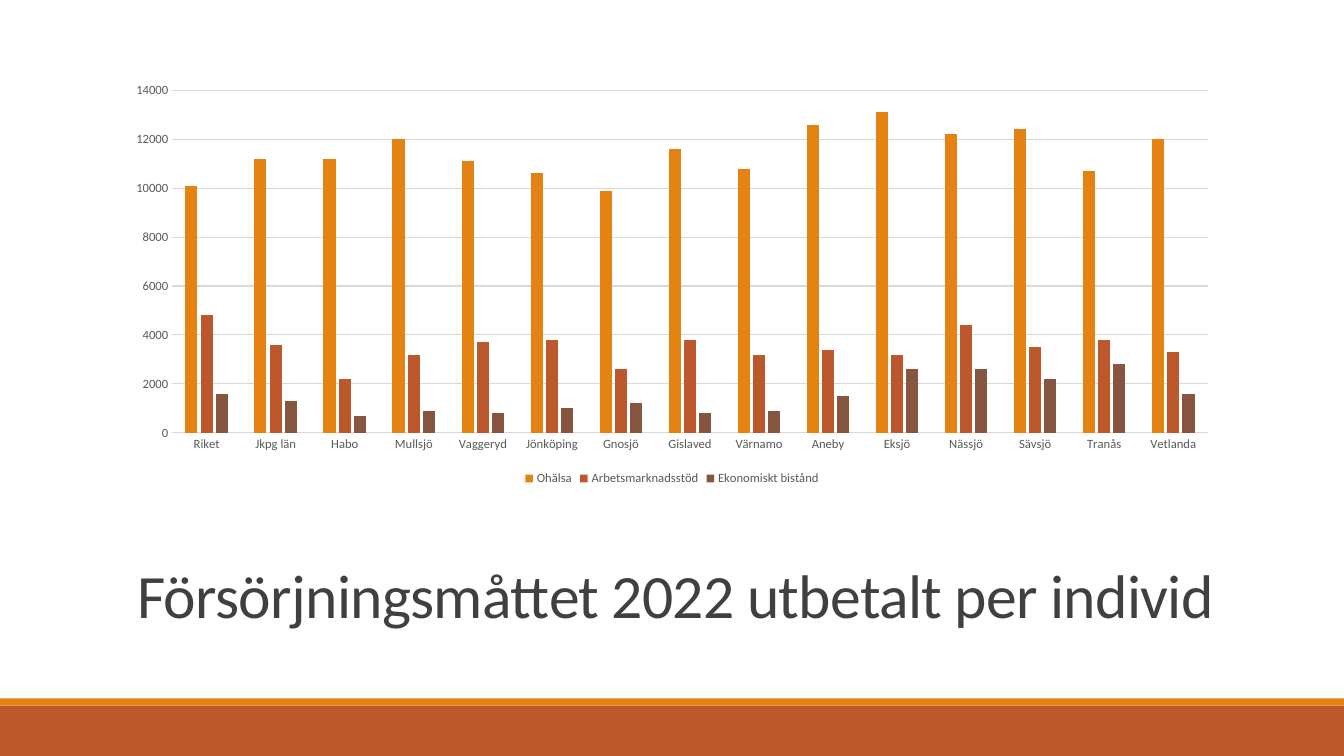
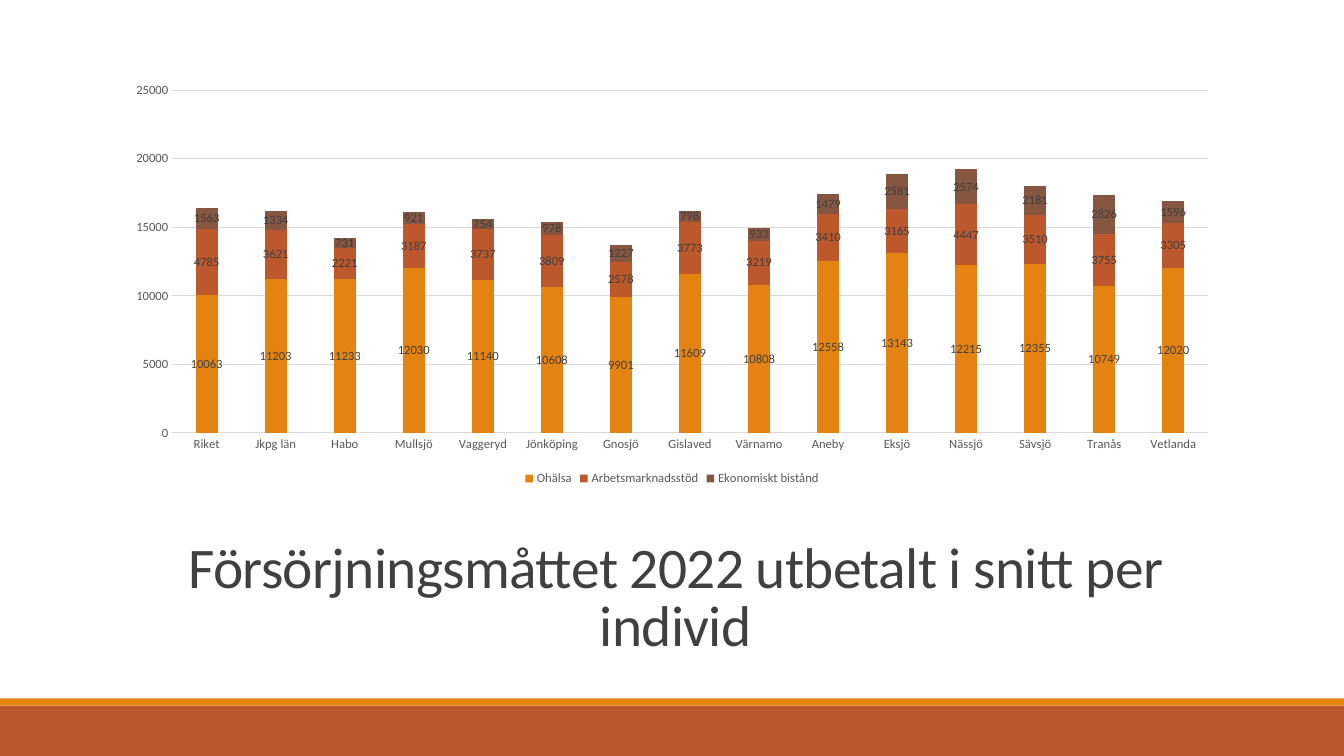
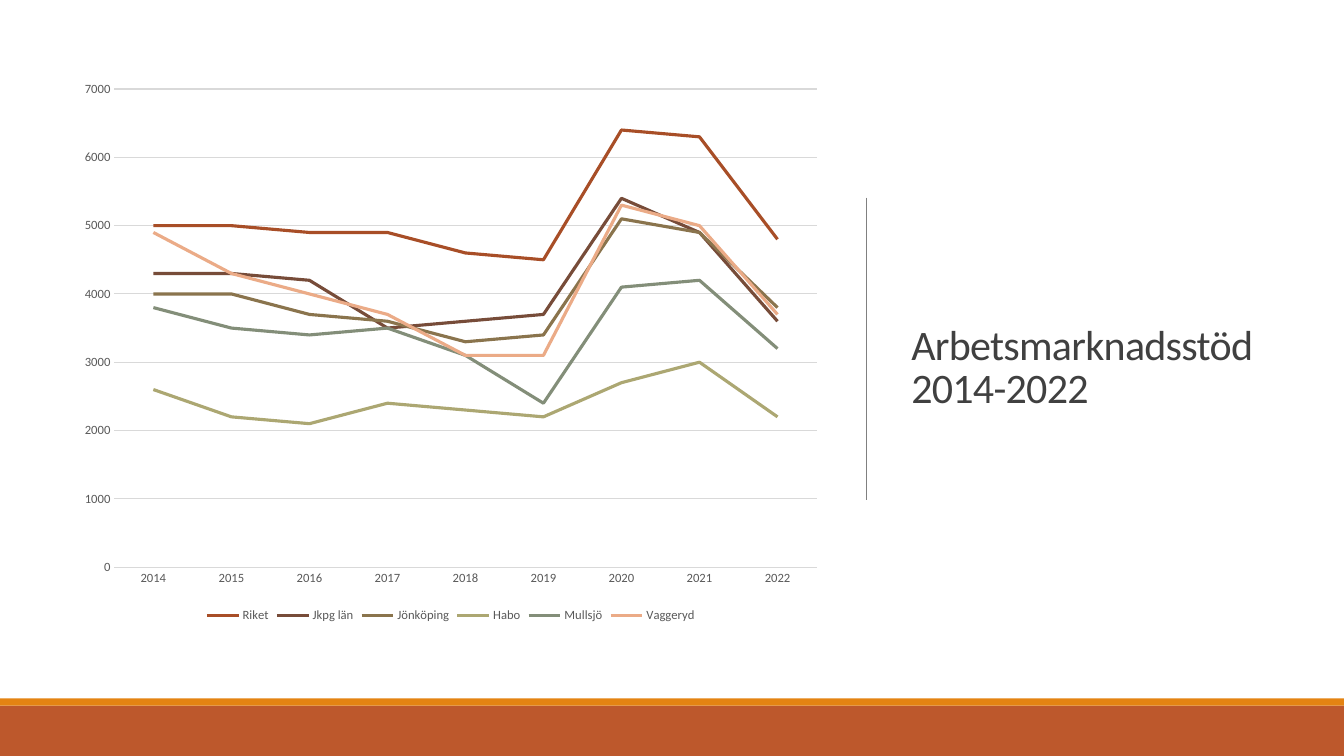
from lxml import etree
from pptx import Presentation
from pptx.chart.data import CategoryChartData
from pptx.dml.color import RGBColor
from pptx.enum.chart import XL_CHART_TYPE as CT, XL_LEGEND_POSITION as LP
from pptx.enum.chart import XL_MARKER_STYLE as MS, XL_TICK_MARK as TM
from pptx.enum.shapes import MSO_CONNECTOR, MSO_SHAPE
from pptx.enum.text import MSO_ANCHOR, PP_ALIGN
from pptx.oxml.ns import qn
from pptx.util import Inches, Pt

FONT = "Calibri"
COLORS = {
    "orange": "E48312", "rust": "BD582C", "brown": "865640",
    "title": "404040", "axis": "595959", "grid": "D9D9D9",
    "divider": "808080", "black": "000000",
    "riket": "A84E27", "lan": "774C39", "jonkoping": "8A744D",
    "habo": "ACA772", "mullsjo": "838E79", "vaggeryd": "EBAB87",
}

PLACES = ["Riket", "Jkpg län", "Habo", "Mullsjö", "Vaggeryd", "Jönköping",
          "Gnosjö", "Gislaved", "Värnamo", "Aneby", "Eksjö", "Nässjö",
          "Sävsjö", "Tranås", "Vetlanda"]
SUPPORT = [
    ("Ohälsa", "orange",
     [10063, 11203, 11233, 12030, 11140, 10608, 9901, 11609, 10808,
      12558, 13143, 12215, 12355, 10749, 12020]),
    ("Arbetsmarknadsstöd", "rust",
     [4785, 3621, 2221, 3187, 3737, 3809, 2578, 3773, 3219,
      3410, 3165, 4447, 3510, 3755, 3305]),
    ("Ekonomiskt bistånd", "brown",
     [1563, 1334, 731, 921, 754, 978, 1227, 798, 933,
      1479, 2581, 2574, 2181, 2826, 1596]),
]
SUPPORT_ROUNDED = [(name, color, [round(v, -2) for v in vals])
                   for name, color, vals in SUPPORT]

YEARS = [str(y) for y in range(2014, 2023)]
TREND = [
    ("Riket", "riket",
     [5000, 5000, 4900, 4900, 4600, 4500, 6400, 6300, 4800]),
    ("Jkpg län", "lan",
     [4300, 4300, 4200, 3500, 3600, 3700, 5400, 4900, 3600]),
    ("Jönköping", "jonkoping",
     [4000, 4000, 3700, 3600, 3300, 3400, 5100, 4900, 3800]),
    ("Habo", "habo",
     [2600, 2200, 2100, 2400, 2300, 2200, 2700, 3000, 2200]),
    ("Mullsjö", "mullsjo",
     [3800, 3500, 3400, 3500, 3100, 2400, 4100, 4200, 3200]),
    ("Vaggeryd", "vaggeryd",
     [4900, 4300, 4000, 3700, 3100, 3100, 5300, 5000, 3700]),
]

COLUMN_BOX = (1.13, 0.74, 11.07, 4.12)
TREND_BOX = (0.69, 0.7, 7.56, 5.52)
BOTTOM_TITLE = (1.2, 5.3, 11, 1.3)
SIDE_TITLE = (8.94, 0.9, 3.69, 5.53)


def rgb(name):
    return RGBColor.from_string(COLORS[name])


def inches(box):
    return [Inches(v) for v in box]


def set_font(font, size, color):
    font.name = FONT
    font.size = Pt(size)
    font.color.rgb = rgb(color)


def add_band(s, top, height, color):
    sp = s.shapes.add_shape(MSO_SHAPE.RECTANGLE,
                            *inches((0, top, 13.33, height)))
    sp.shadow.inherit = False
    sp.fill.solid()
    sp.fill.fore_color.rgb = rgb(color)
    sp.line.fill.background()


def add_slide(prs):
    s = prs.slides.add_slide(prs.slide_layouts[6])
    add_band(s, 7, 0.5, "rust")
    add_band(s, 6.93, 0.07, "orange")
    return s


def add_title(s, text, box, size, align=PP_ALIGN.CENTER):
    tf = s.shapes.add_textbox(*inches(box)).text_frame
    tf.word_wrap = True
    tf.vertical_anchor = MSO_ANCHOR.MIDDLE
    p = tf.paragraphs[0]
    p.text = text
    p.alignment = align
    p.line_spacing = 0.85
    set_font(p.font, size, "title")
    p._p.get_or_add_pPr().get_or_add_defRPr().set("spc", "-50")


def add_divider(s, x, top, bottom):
    line = s.shapes.add_connector(MSO_CONNECTOR.STRAIGHT,
                                  *inches((x, top, x, bottom)))
    line.line.color.rgb = rgb("divider")
    line.line.width = Pt(0.5)
    etree.SubElement(line._element.spPr, qn("a:effectLst"))


def style_axes(chart, maximum, step):
    cat, val = chart.category_axis, chart.value_axis
    for axis in (cat, val):
        axis.major_tick_mark = axis.minor_tick_mark = TM.NONE
        set_font(axis.tick_labels.font, 9, "axis")
    val.minimum_scale = 0
    val.maximum_scale = maximum
    val.major_unit = step
    val.has_major_gridlines = True
    val.format.line.fill.background()
    for line in (cat.format.line, val.major_gridlines.format.line):
        line.color.rgb = rgb("grid")
        line.width = Pt(0.75)


def add_chart(s, kind, box, cats, rows, maximum, step):
    data = CategoryChartData()
    data.categories = cats
    for name, _, vals in rows:
        data.add_series(name, vals)
    chart = s.shapes.add_chart(kind, *inches(box), data).chart
    set_font(chart.font, 10, "black")
    chart.has_title = False
    chart.has_legend = True
    chart.legend.position = LP.BOTTOM
    chart.legend.include_in_layout = False
    set_font(chart.legend.font, 9, "axis")
    style_axes(chart, maximum, step)
    chart.plots[0].vary_by_categories = False
    return chart


def add_columns(s, kind, rows, maximum, step, overlap, labels=False):
    plot = add_chart(s, kind, COLUMN_BOX, PLACES, rows, maximum, step).plots[0]
    plot.gap_width = 219
    plot.overlap = overlap
    for series, (_, color, _) in zip(plot.series, rows):
        series.format.fill.solid()
        series.format.fill.fore_color.rgb = rgb(color)
        if labels:
            series.data_labels.show_value = True
            set_font(series.data_labels.font, 9, "title")


def add_lines(s, rows, maximum, step):
    chart = add_chart(s, CT.LINE, TREND_BOX, YEARS, rows, maximum, step)
    for series, (_, color, _) in zip(chart.plots[0].series, rows):
        series.smooth = False
        series.marker.style = MS.NONE
        series.format.line.color.rgb = rgb(color)
        series.format.line.width = Pt(2.25)


def main():
    prs = Presentation()
    prs.slide_width, prs.slide_height = Inches(13.33), Inches(7.5)

    s = add_slide(prs)
    add_title(s, "Försörjningsmåttet 2022 utbetalt per individ",
              BOTTOM_TITLE, 44)
    add_columns(s, CT.COLUMN_CLUSTERED, SUPPORT_ROUNDED, 14000, 2000, -27)

    s = add_slide(prs)
    add_title(s, "Försörjningsmåttet 2022 utbetalt i snitt per individ",
              BOTTOM_TITLE, 41)
    add_columns(s, CT.COLUMN_STACKED, SUPPORT, 25000, 5000, 100, labels=True)

    s = add_slide(prs)
    add_title(s, "Arbetsmarknadsstöd 2014-2022", SIDE_TITLE, 30,
              PP_ALIGN.LEFT)
    add_divider(s, 8.59, 1.96, 4.96)
    add_lines(s, TREND, 7000, 1000)

    prs.save("out.pptx")


if __name__ == "__main__":
    main()
